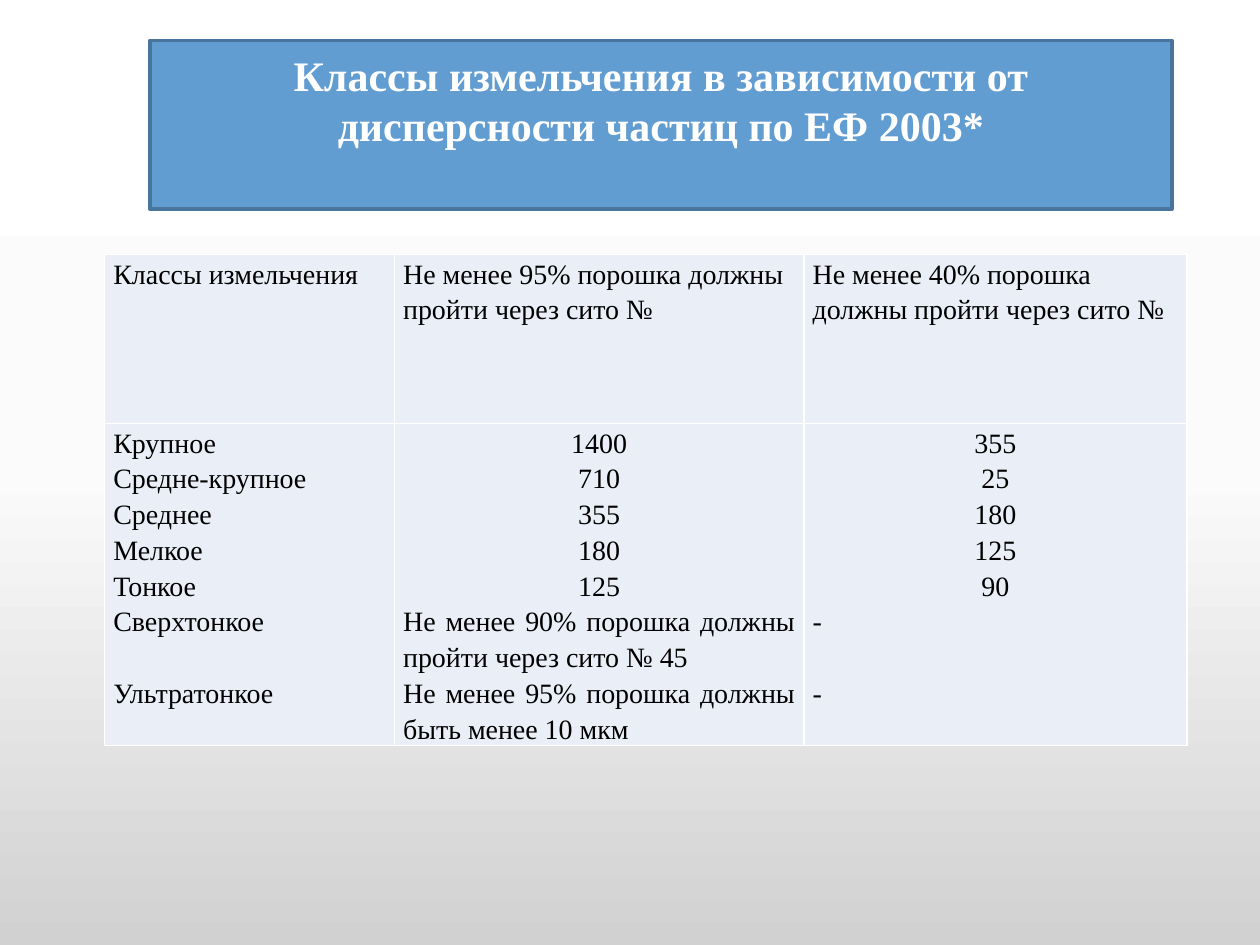
from copy import deepcopy
from dataclasses import dataclass

from lxml import etree
from pptx import Presentation
from pptx.dml.color import RGBColor
from pptx.enum.text import MSO_ANCHOR, MSO_AUTO_SIZE, PP_ALIGN
from pptx.oxml.ns import qn
from pptx.util import Inches, Pt

LEFT, CENTER, JUSTIFY = PP_ALIGN.LEFT, PP_ALIGN.CENTER, PP_ALIGN.JUSTIFY
TITLE_ONLY = 5


@dataclass(frozen=True)
class Theme:
    font: str = "Times New Roman"
    title_size: float = 24
    body_size: float = 16
    body_line: float = 20.5
    title_fill: str = "629DD1"
    title_line: str = "49749B"
    white: str = "FFFFFF"
    black: str = "000000"
    cell: str = "EAEFF7"
    backdrop: tuple = ((0, "FFFFFF"), (0.5, "FBFBFB"), (1, "D1D1D1"))


THEME = Theme()

TITLE = "Классы измельчения в зависимости от дисперсности частиц по ЕФ 2003*"
HEADERS = (
    "Классы измельчения",
    "Не менее 95% порошка должны пройти через сито №",
    "Не менее 40% порошка должны пройти через сито №",
)
CLASSES = ("Крупное", "Средне-крупное", "Среднее", "Мелкое", "Тонкое",
           "Сверхтонкое", "Ультратонкое")
SIEVE_95 = ("1400", "710", "355", "180", "125")
SIEVE_40 = ("355", "25", "180", "125", "90")
FINEST_95 = ("Не менее 90% порошка должны пройти через сито № 45",
             "Не менее 95% порошка должны быть менее 10 мкм")
FINEST_40 = ("-", "-")


def rgb(value):
    return RGBColor.from_string(value)


def write(p, text, size=THEME.body_size, color=THEME.black, bold=False,
          align=LEFT, spacing=1.0, before=0):
    p.alignment = align
    p.line_spacing = spacing
    p.space_before = Pt(before)
    r = p.add_run()
    r.text = text
    r.font.name = THEME.font
    r.font.size = Pt(size)
    r.font.bold = bold
    r.font.color.rgb = rgb(color)


def paint_background(s):
    fill = s.background.fill
    fill.gradient()
    fill.gradient_angle = 270
    first = s.element.find(".//" + qn("a:gs"))
    first.addnext(deepcopy(first))
    for stop, (position, color) in zip(fill.gradient_stops, THEME.backdrop):
        stop.position = position
        stop.color.rgb = rgb(color)


def add_title(s, left, top, width, height):
    """Turn the title placeholder into a rounded banner."""
    sp = s.shapes.title
    sp.left, sp.top, sp.width, sp.height = left, top, width, height
    geom = etree.Element(qn("a:prstGeom"), prst="roundRect")
    etree.SubElement(geom, qn("a:avLst"))
    sp.element.spPr.find(qn("a:xfrm")).addnext(geom)
    sp.fill.solid()
    sp.fill.fore_color.rgb = rgb(THEME.title_fill)
    sp.line.color.rgb = rgb(THEME.title_line)
    sp.line.width = Pt(2)
    tf = sp.text_frame
    tf.word_wrap = True
    tf.auto_size = MSO_AUTO_SIZE.NONE
    tf.vertical_anchor = MSO_ANCHOR.MIDDLE
    tf.margin_bottom = Inches(0.45)
    write(tf.paragraphs[0], TITLE, size=THEME.title_size, color=THEME.white,
          bold=True, align=CENTER)


def add_borders(cell):
    tcPr = cell._tc.get_or_add_tcPr()
    for i, side in enumerate(("lnL", "lnR", "lnT", "lnB")):
        ln = etree.Element(qn("a:" + side), w=str(Pt(1)))
        fill = etree.SubElement(ln, qn("a:solidFill"))
        etree.SubElement(fill, qn("a:srgbClr"), val=THEME.white)
        tcPr.insert(i, ln)


def fill_cell(cell, lines):
    """Write (text, alignment, space before) lines into a formatted cell."""
    cell.fill.solid()
    cell.fill.fore_color.rgb = rgb(THEME.cell)
    add_borders(cell)
    cell.margin_left = cell.margin_right = Inches(0.07)
    cell.margin_top = cell.margin_bottom = 0
    tf = cell.text_frame
    for i, (text, align, before) in enumerate(lines):
        p = tf.add_paragraph() if i else tf.paragraphs[0]
        write(p, text, align=align, spacing=1.15, before=before)


def body_lines(centered, justified, last_gap):
    lines = [(text, CENTER, 0) for text in centered]
    lines += [(text, JUSTIFY, 0) for text in justified[:-1]]
    return lines + [(justified[-1], JUSTIFY, last_gap)]


def add_sieve_table(s, left, top, widths, heights):
    table = s.shapes.add_table(len(heights), len(widths), left, top,
                               sum(widths), sum(heights)).table
    table.first_row = table.horz_banding = False
    for column, width in zip(table.columns, widths):
        column.width = width
    for row, height in zip(table.rows, heights):
        row.height = height
    gap = THEME.body_line
    bodies = (body_lines((), CLASSES, gap),
              body_lines(SIEVE_95, FINEST_95, 0),
              body_lines(SIEVE_40, FINEST_40, gap))
    for c, (header, body) in enumerate(zip(HEADERS, bodies)):
        fill_cell(table.cell(0, c), [(header, LEFT, 0)])
        fill_cell(table.cell(1, c), body)


def main():
    prs = Presentation()
    prs.slide_width, prs.slide_height = Inches(10), Inches(7.5)
    s = prs.slides.add_slide(prs.slide_layouts[TITLE_ONLY])
    paint_background(s)
    add_title(s, Inches(1.19), Inches(0.32), Inches(8.11), Inches(1.34))
    add_sieve_table(s, Inches(0.83), Inches(2.02),
                    [Inches(w) for w in (2.3, 3.25, 3.04)],
                    [Inches(h) for h in (1.34, 2.55)])
    prs.save("out.pptx")


if __name__ == "__main__":
    main()
